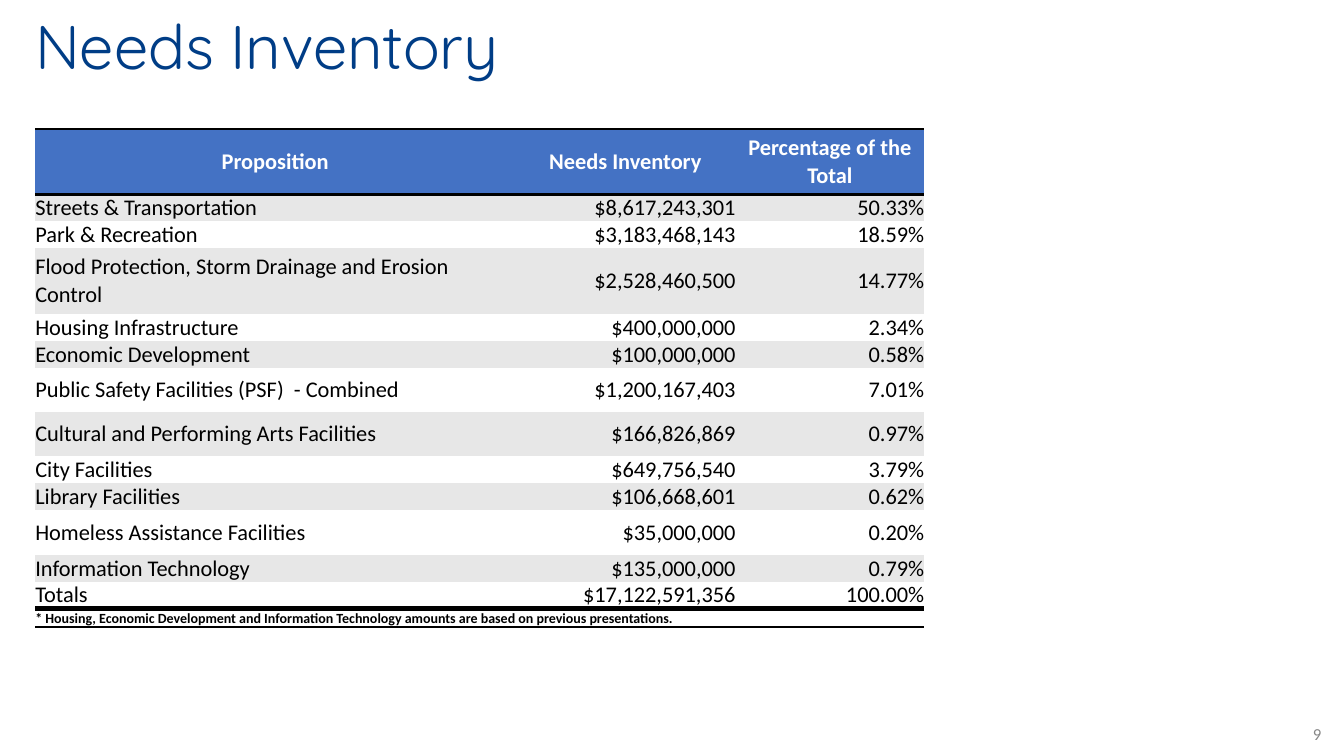
from lxml import etree
from pptx import Presentation
from pptx import util as u
from pptx.dml.color import RGBColor
from pptx.enum import text
from pptx.oxml import ns

TITLE = "Needs Inventory"
PAGE_NUMBER = "9"
HEADINGS = ("Proposition", "Needs Inventory", "Percentage of the Total")
# Proposition, amount, share, row height in cm
NEEDS = [
    ("Streets & Transportation", "$8,617,243,301", "50.33%", 0.58),
    ("Park & Recreation", "$3,183,468,143", "18.59%", 0.58),
    ("Flood Protection, Storm Drainage and Erosion Control",
     "$2,528,460,500", "14.77%", 1.65),
    ("Housing Infrastructure", "$400,000,000", "2.34%", 0.58),
    ("Economic Development", "$100,000,000", "0.58%", 0.58),
    ("Public Safety Facilities (PSF)  - Combined", "$1,200,167,403", "7.01%", 1.12),
    ("Cultural and Performing Arts Facilities", "$166,826,869", "0.97%", 1.12),
    ("City Facilities", "$649,756,540", "3.79%", 0.58),
    ("Library Facilities", "$106,668,601", "0.62%", 0.58),
    ("Homeless Assistance Facilities", "$35,000,000", "0.20%", 1.12),
    ("Information Technology", "$135,000,000", "0.79%", 0.58),
    ("Totals", "$17,122,591,356", "100.00%", 0.58),
]
FOOTNOTE = ("* Housing, Economic Development and Information Technology "
            "amounts are based on previous presentations.")
HEADER_HEIGHT, FOOTNOTE_HEIGHT = 1.65, 0.46
COLUMN_WIDTHS = (12.09, 5.56, 4.75)
LEFT_MARGIN = 0.89
NO_STYLE_NO_GRID = "{2D5ABB26-0587-4C30-8999-92F81FD0307C}"


class Theme:
    title_font, body_font = "Quicksand", "Calibri"
    title_size, body_size, number_size, note_size = 44, 16, 12, 10
    navy, header, band = "003D86", "4472C4", "E7E7E7"
    white, black, grey = "FFFFFF", "000000", "878787"


LEFT, CENTER, RIGHT = text.PP_ALIGN.LEFT, text.PP_ALIGN.CENTER, text.PP_ALIGN.RIGHT
TOP, MIDDLE, BOTTOM = text.MSO_ANCHOR.TOP, text.MSO_ANCHOR.MIDDLE, text.MSO_ANCHOR.BOTTOM


def write(frame, words, size=Theme.body_size, font=Theme.body_font,
          color=Theme.black, bold=False, align=LEFT, line_spacing=None, tracking=None):
    para = frame.paragraphs[0]
    para.alignment = align
    if line_spacing:
        para.line_spacing = line_spacing
    span = para.add_run()
    span.text = words
    span.font.size = u.Pt(size)
    span.font.name = font
    span.font.bold = bold
    span.font.color.rgb = RGBColor.from_string(color)
    if tracking:
        span._r.get_or_add_rPr().set("spc", str(tracking))


def add_text(page, words, place, anchor, **style):
    box = page.shapes.add_textbox(*(u.Cm(length) for length in place))
    frame = box.text_frame
    frame.word_wrap = True
    frame.vertical_anchor = anchor
    frame.margin_left = frame.margin_right = frame.margin_top = frame.margin_bottom = 0
    write(frame, words, **style)


def rule_cell(cell, top, bottom):
    """Draw black lines, with widths in points, above and below a cell."""
    properties = cell._tc.get_or_add_tcPr()
    for index, (tag, width) in enumerate((("a:lnT", top), ("a:lnB", bottom))):
        line = etree.Element(ns.qn(tag), w=str(u.Pt(width)))
        fill = etree.SubElement(line, ns.qn("a:solidFill"))
        etree.SubElement(fill, ns.qn("a:srgbClr"), val=Theme.black)
        properties.insert(index, line)


def fill_cell(cell, words, fill, anchor=MIDDLE, rules=None, **style):
    cell.margin_left = cell.margin_right = cell.margin_top = cell.margin_bottom = 0
    cell.vertical_anchor = anchor
    cell.fill.solid()
    cell.fill.fore_color.rgb = RGBColor.from_string(fill)
    if rules:
        rule_cell(cell, *rules)
    if words:
        write(cell.text_frame, words, **style)


def add_needs_table(page):
    heights = [HEADER_HEIGHT, *(need[3] for need in NEEDS), FOOTNOTE_HEIGHT]
    table = page.shapes.add_table(
        len(heights), len(COLUMN_WIDTHS), u.Cm(LEFT_MARGIN), u.Cm(3.25),
        u.Cm(sum(COLUMN_WIDTHS)), u.Cm(sum(heights))).table
    table.first_row = table.horz_banding = False
    table._tbl.tblPr.find(ns.qn("a:tableStyleId")).text = NO_STYLE_NO_GRID
    for column, width in zip(table.columns, COLUMN_WIDTHS):
        column.width = u.Cm(width)
    for row, height in zip(table.rows, heights):
        row.height = u.Cm(height)

    for column, heading in enumerate(HEADINGS):
        fill_cell(table.cell(0, column), heading, Theme.header, rules=(2, 2),
                  color=Theme.white, bold=True, align=CENTER)
    for row, need in enumerate(NEEDS, start=1):
        band = Theme.band if row % 2 else Theme.white
        for column, words in enumerate(need[:3]):
            anchor = BOTTOM if words == "Totals" else MIDDLE
            fill_cell(table.cell(row, column), words, band, anchor,
                      align=RIGHT if column else LEFT)

    last = len(heights) - 1
    table.cell(last, 0).merge(table.cell(last, len(COLUMN_WIDTHS) - 1))
    for column in range(len(COLUMN_WIDTHS)):
        fill_cell(table.cell(last, column), "" if column else FOOTNOTE, Theme.white,
                  BOTTOM, rules=(4, 2), size=Theme.note_size, bold=True)


def main():
    deck = Presentation()
    deck.slide_width, deck.slide_height = u.Cm(33.87), u.Cm(19.05)
    page = deck.slides.add_slide(deck.slide_layouts[6])
    add_text(page, TITLE, (LEFT_MARGIN, 0.41, 29.46, 3.43), TOP,
             size=Theme.title_size, font=Theme.title_font, color=Theme.navy,
             line_spacing=0.9, tracking=-10)
    add_needs_table(page)
    add_text(page, PAGE_NUMBER, (32.64, 18.29, 0.66, 0.48), MIDDLE,
             size=Theme.number_size, color=Theme.grey, align=RIGHT,
             line_spacing=u.Pt(12.4), tracking=-20)
    deck.save("out.pptx")


if __name__ == "__main__":
    main()
